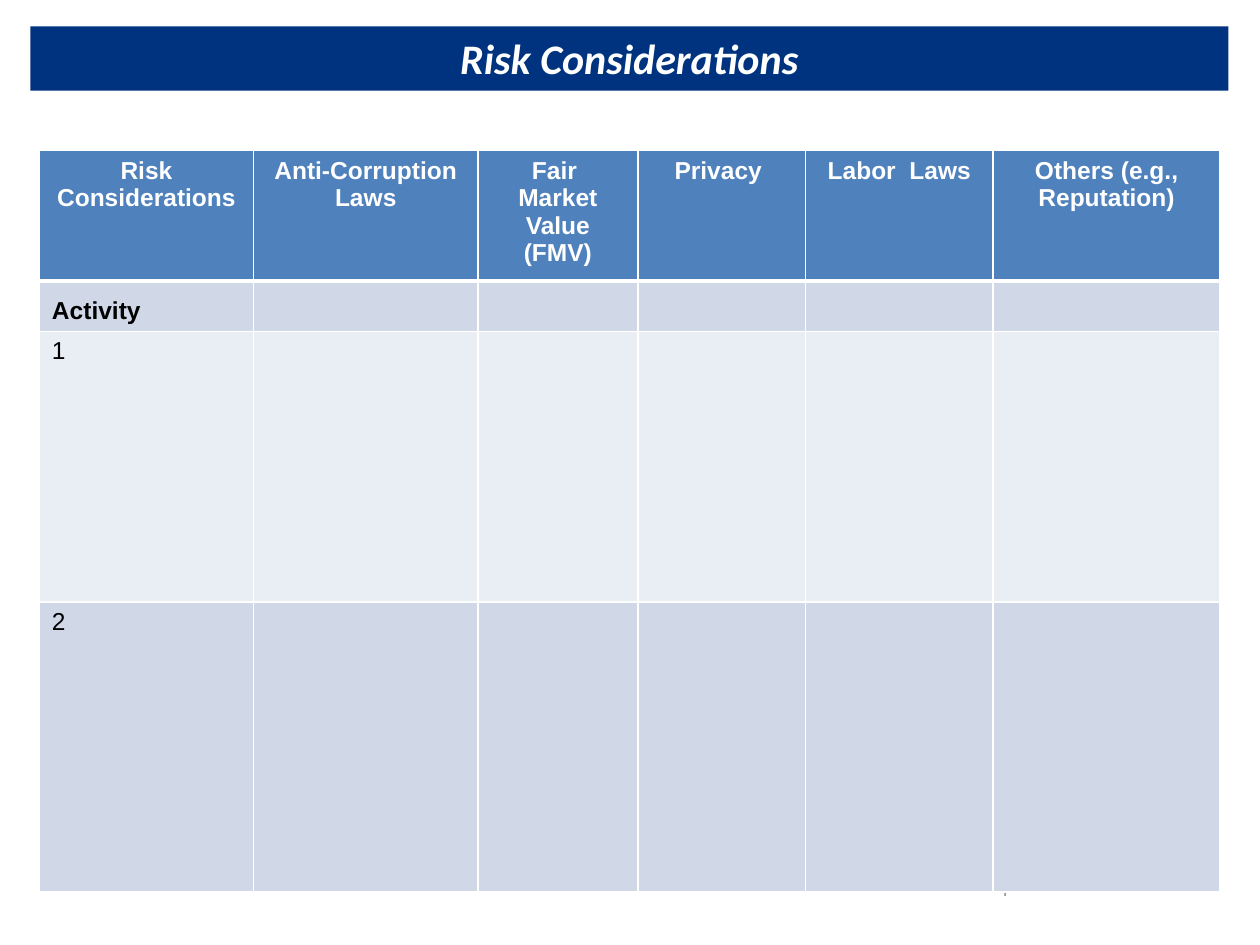
"""Build the risk considerations slide with python-pptx."""
import lxml.etree
import pptx
import pptx.dml.color
import pptx.enum.shapes
import pptx.enum.text
import pptx.oxml.ns
import pptx.util

Pt = pptx.util.Pt
ALIGN = pptx.enum.text.PP_ALIGN
ANCHOR = pptx.enum.text.MSO_ANCHOR
HUES = {"navy": "00337F", "blue": "4F81BD", "band": "D0D8E8", "pale": "E9EDF4",
        "white": "FFFFFF", "black": "000000", "gray": "898989"}
HEADS = ["Risk Considerations", "Anti-Corruption\nLaws", "Fair  Market Value (FMV)",
         "Privacy ", "Labor  Laws", "Others (e.g., Reputation)"]
COLS = [122.4, 128.2, 91.4, 95.8, 107.3, 129.6]
ROWS = [("blue", 45.4, HEADS), ("band", 28.8, ["Activity"]),
        ("pale", 154.8, ["1"]), ("band", 165.6, ["2"])]


def paint(fill, hue):
    """Fill with one named colour."""
    fill.solid()
    fill.fore_color.rgb = pptx.dml.color.RGBColor.from_string(HUES[hue])


def write(frame, text, face, size, hue, bold=False, italic=False, align=ALIGN.LEFT):
    """Write text in one style, a paragraph for each line."""
    frame.text = text
    for para in frame.paragraphs:
        para.alignment = align
        font = para.font
        font.name, font.size, font.bold, font.italic = face, Pt(size), bold, italic
        paint(font.fill, hue)


def edge(cell, base):
    """Draw white borders, with the bottom one as wide as given."""
    props = cell._tc.get_or_add_tcPr()
    for spot, (side, width) in enumerate([("L", 1), ("R", 1), ("T", 1), ("B", base)]):
        line = lxml.etree.Element(pptx.oxml.ns.qn(f"a:ln{side}"), w=str(Pt(width)))
        solid = lxml.etree.SubElement(line, pptx.oxml.ns.qn("a:solidFill"))
        lxml.etree.SubElement(solid, pptx.oxml.ns.qn("a:srgbClr"), val=HUES["white"])
        props.insert(spot, line)


def banner(slide, x, y, w, h):
    """Place the title bar."""
    bar = slide.shapes.add_shape(pptx.enum.shapes.MSO_SHAPE.RECTANGLE,
                                 Pt(x), Pt(y), Pt(w), Pt(h))
    bar.shadow.inherit = False
    paint(bar.fill, "navy")
    bar.line.fill.background()
    bar.text_frame.vertical_anchor = ANCHOR.TOP
    write(bar.text_frame, "Risk Considerations", "Calibri", 24, "white",
          True, True, ALIGN.CENTER)


def number(slide, x, y, w, h):
    """Place the page number."""
    frame = slide.shapes.add_textbox(Pt(x), Pt(y), Pt(w), Pt(h)).text_frame
    frame.word_wrap = True
    frame.vertical_anchor = ANCHOR.MIDDLE
    write(frame, "4", "Calibri", 12, "gray")


def matrix(slide, x, y):
    """Place the table of activities against risks."""
    high = sum(row[1] for row in ROWS)
    grid = slide.shapes.add_table(len(ROWS), len(COLS), Pt(x), Pt(y),
                                  Pt(sum(COLS)), Pt(high)).table
    for col, width in zip(grid.columns, COLS):
        col.width = Pt(width)
    for r, (hue, height, texts) in enumerate(ROWS):
        grid.rows[r].height = Pt(height)
        head = r == 0
        for c in range(len(COLS)):
            cell = grid.cell(r, c)
            paint(cell.fill, hue)
            edge(cell, 3 if head else 1)
            if c < len(texts):
                write(cell.text_frame, texts[c], "Arial", 14,
                      "white" if head else "black", r < 2,
                      align=ALIGN.CENTER if head else ALIGN.LEFT)
    grid.cell(1, 0).vertical_anchor = ANCHOR.BOTTOM


def main():
    """Build and save the deck."""
    deck = pptx.Presentation()
    deck.slide_width, deck.slide_height = Pt(720), Pt(540)
    slide = deck.slides.add_slide(deck.slide_layouts[6])
    banner(slide, 17.3, 15.1, 684.7, 36.7)
    number(slide, 563, 494, 151, 26.6)
    matrix(slide, 22.5, 86)
    deck.save("out.pptx")


if __name__ == "__main__":
    main()
